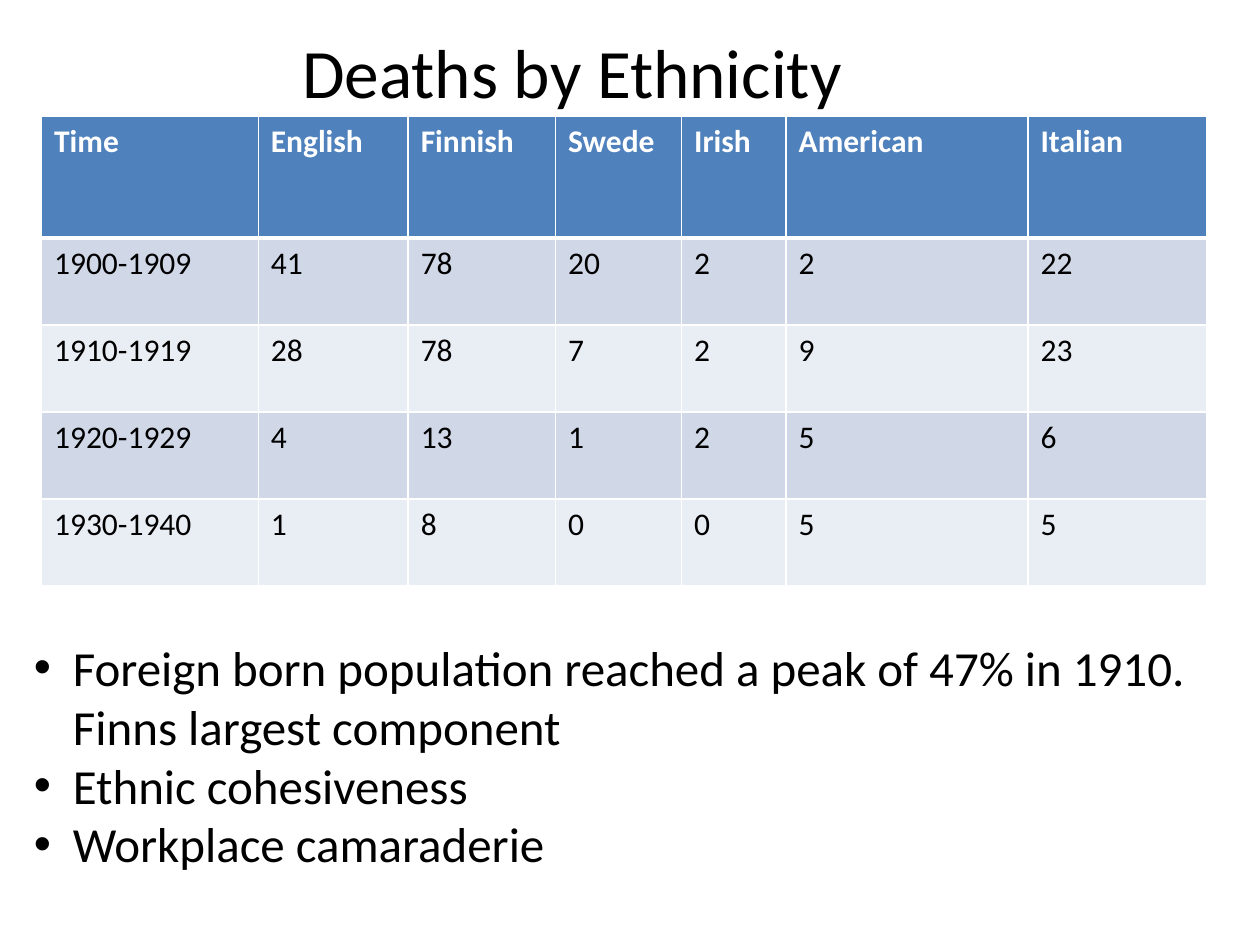
import dataclasses
import pptx
import pptx.dml.color
import pptx.enum.text
import pptx.oxml
import pptx.oxml.ns
import pptx.util


@dataclasses.dataclass(frozen=True)
class Theme:
    font: str = "Calibri"
    ink: str = "000000"
    white: str = "FFFFFF"
    head: str = "4F81BD"
    bands: tuple = ("D0D8E8", "E9EDF4")
    title: float = 39.6
    body: float = 28
    cell: float = 18
    thin: float = 1
    thick: float = 3


THEME = Theme()
WIDE, HIGH = pptx.util.Inches(10), pptx.util.Inches(7.5)
COLS, ROWS = 100, 75
UNIT = WIDE / COLS

HEADS = ["Time", "English", "Finnish", "Swede", "Irish", "American", "Italian"]
DEATHS = [
    ["1900-1909", 41, 78, 20, 2, 2, 22],
    ["1910-1919", 28, 78, 7, 2, 9, 23],
    ["1920-1929", 4, 13, 1, 2, 5, 6],
    ["1930-1940", 1, 8, 0, 0, 5, 5],
]
SPANS = [17.2, 11.9, 11.7, 10, 8.3, 19.2, 14.2]
TALLS = [9.7] + [6.9] * len(DEATHS)
POINTS = [
    "Foreign born population reached a peak of 47% in 1910. Finns largest component",
    "Ethnic cohesiveness",
    "Workplace camaraderie",
]


def place(left, top, width, height):
    return (
        round(left * WIDE / COLS),
        round(top * HIGH / ROWS),
        round(width * WIDE / COLS),
        round(height * HIGH / ROWS),
    )


def color(code):
    return pptx.dml.color.RGBColor.from_string(code)


def style(frame, size, ink=THEME.ink, bold=False):
    for para in frame.paragraphs:
        for run in para.runs:
            run.font.name = THEME.font
            run.font.size = pptx.util.Pt(size)
            run.font.bold = bold
            run.font.color.rgb = color(ink)


def border(cell, side, points):
    width = pptx.util.Pt(points)
    cell._tc.get_or_add_tcPr().append(pptx.oxml.parse_xml(
        f'<a:{side} {pptx.oxml.ns.nsdecls("a")} w="{width}">'
        f'<a:solidFill><a:srgbClr val="{THEME.white}"/></a:solidFill></a:{side}>'
    ))


def bullet(para, indent):
    props = para._p.get_or_add_pPr()
    props.set("marL", str(indent))
    props.set("indent", str(-indent))
    for xml in ('buFont {} typeface="Arial"', 'buChar {} char="•"'):
        names = pptx.oxml.ns.nsdecls("a")
        props.append(pptx.oxml.parse_xml(f"<a:{xml.format(names)}/>"))


def add_title(slide, box):
    frame = slide.shapes.add_textbox(*box).text_frame
    frame.word_wrap = True
    frame.vertical_anchor = pptx.enum.text.MSO_ANCHOR.MIDDLE
    frame.text = "Deaths by Ethnicity"
    frame.paragraphs[0].alignment = pptx.enum.text.PP_ALIGN.CENTER
    style(frame, THEME.title)


def add_deaths(slide, box):
    data = [HEADS] + DEATHS
    table = slide.shapes.add_table(len(data), len(HEADS), *box).table
    for col, span in zip(table.columns, SPANS):
        col.width = round(box[2] * span / sum(SPANS))
    for row, tall in zip(table.rows, TALLS):
        row.height = round(box[3] * tall / sum(TALLS))
    for i, values in enumerate(data):
        top = i == 0
        fill = THEME.head if top else THEME.bands[(i - 1) % 2]
        edges = {
            "lnL": THEME.thin,
            "lnR": THEME.thin,
            "lnT": THEME.thick if i == 1 else THEME.thin,
            "lnB": THEME.thick if top else THEME.thin,
        }
        for j, value in enumerate(values):
            cell = table.cell(i, j)
            cell.text_frame.text = str(value)
            style(cell.text_frame, THEME.cell, THEME.white if top else THEME.ink, top)
            for side, points in edges.items():
                border(cell, side, points)
            cell.fill.solid()
            cell.fill.fore_color.rgb = color(fill)


def add_points(slide, box):
    frame = slide.shapes.add_textbox(*box).text_frame
    frame.word_wrap = True
    frame.text = "\n".join(POINTS)
    for para in frame.paragraphs:
        bullet(para, round(3.1 * UNIT))
    style(frame, THEME.body)


def main():
    deck = pptx.Presentation()
    deck.slide_width, deck.slide_height = WIDE, HIGH
    slide = deck.slides.add_slide(deck.slide_layouts[6])
    add_title(slide, place(15, 3, 60.8, 5.3))
    add_deaths(slide, place(3.3, 9.2, 92.5, 37.3))
    add_points(slide, place(1.7, 50.1, 94.2, 22.9))
    deck.save("out.pptx")


if __name__ == "__main__":
    main()
